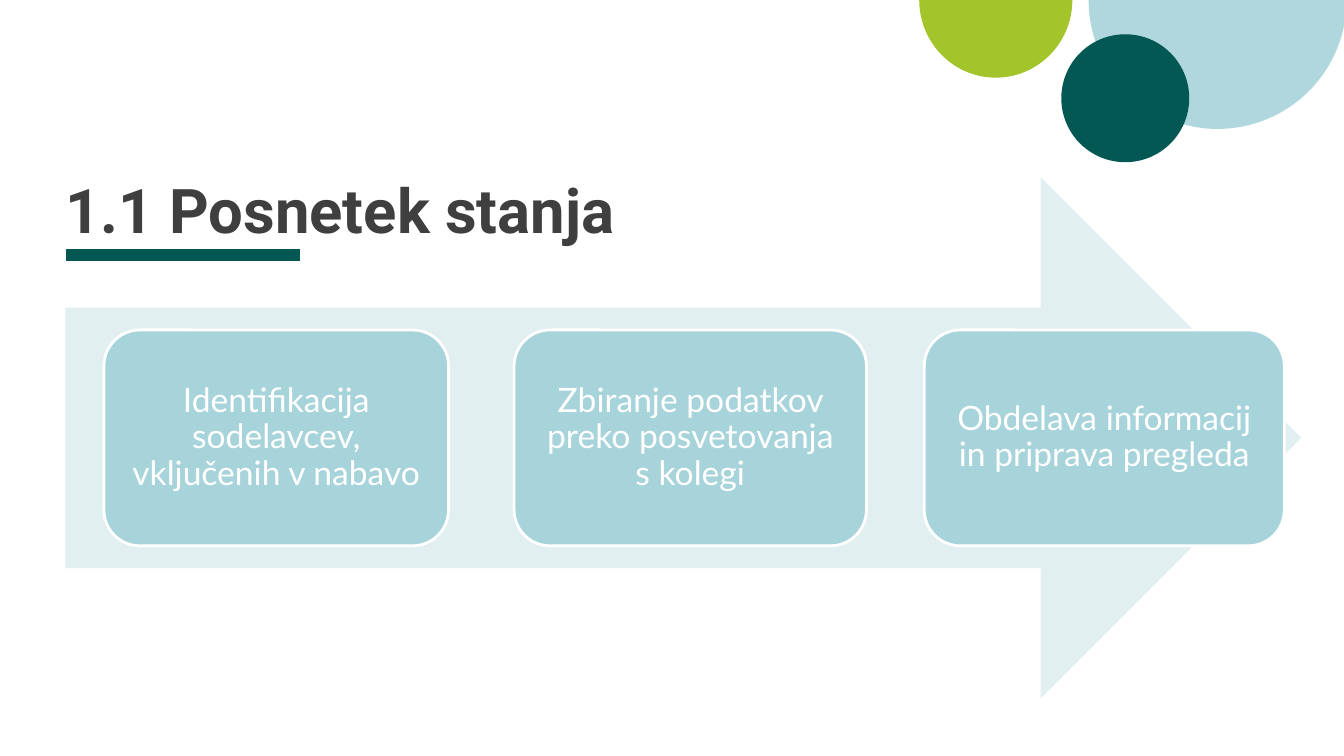
from dataclasses import dataclass

import lxml.etree
import pptx
import pptx.dml.color
import pptx.enum.shapes
import pptx.enum.text
import pptx.oxml.ns
import pptx.util

Pt = pptx.util.Pt
Shape = pptx.enum.shapes.MSO_SHAPE
Align = pptx.enum.text.PP_ALIGN
Anchor = pptx.enum.text.MSO_ANCHOR


@dataclass(frozen=True)
class Theme:
    dark: str = "035854"
    lime: str = "A3C42A"
    sky: str = "AFD7DD"
    pale: str = "E1EFF1"
    card: str = "A7D3DA"
    white: str = "FFFFFF"
    ink: str = "3F3F3F"
    head: str = "Roboto"
    body: str = "Lato"
    big: int = 44
    text: int = 24


THEME = Theme()
STEPS = [
    "Identifikacija sodelavcev, vključenih v nabavo",
    "Zbiranje podatkov preko posvetovanja s kolegi",
    "Obdelava informacij in priprava pregleda",
]


def color(code):
    return pptx.dml.color.RGBColor.from_string(code)


def add_form(slide, kind, box, fill):
    """Add a flat preset shape without outline or shadow."""
    form = slide.shapes.add_shape(kind, *map(Pt, box))
    form.shadow.inherit = False
    form.fill.solid()
    form.fill.fore_color.rgb = color(fill)
    form.line.fill.background()
    return form


def set_text(frame, text, face, size, tint, inset, space):
    frame.text = text
    frame.word_wrap = True
    frame.auto_size = pptx.enum.text.MSO_AUTO_SIZE.NONE
    frame.margin_left = frame.margin_right = Pt(inset)
    frame.margin_top = frame.margin_bottom = Pt(inset)
    para = frame.paragraphs[0]
    para.line_spacing = space
    para.space_before = Pt(0)
    font = para.runs[0].font
    font.name, font.size = face, Pt(size)
    font.color.rgb = color(tint)
    return para


def add_dots(slide, box):
    """Place two half discs and a full disc in the top right corner."""
    left, top, width, height = box
    discs = [
        (Shape.PIE, 121, -92.2, 184.3, 184.3, THEME.sky),
        (Shape.PIE, 0, -55.4, 109.4, 110.9, THEME.lime),
        (Shape.OVAL, 101.5, 24.5, 91.4, 91.4, THEME.dark),
    ]
    for kind, x, y, w, h, fill in discs:
        disc = add_form(slide, kind, (left + x, top + y, w, h), fill)
        if kind == Shape.PIE:
            disc.adjustments[0] = 0
            disc.adjustments[1] = 108


def add_title(slide, box, text):
    left, top, width, height = box
    title = slide.shapes.title
    title.left, title.top, title.width, title.height = map(Pt, box)
    frame = title.text_frame
    para = set_text(frame, text, THEME.head, THEME.big, THEME.ink, 0, 0.8)
    para.alignment = Align.LEFT
    para.runs[0].font.bold = True
    frame.vertical_anchor = Anchor.BOTTOM

    base = Pt(top + height + 7.2)
    rule = slide.shapes.add_connector(
        pptx.enum.shapes.MSO_CONNECTOR.STRAIGHT,
        Pt(left), base, Pt(left + 167.5), base)
    rule.line.color.rgb = color(THEME.dark)
    rule.line.width = Pt(8)
    props = rule._element.spPr
    lxml.etree.SubElement(props, pptx.oxml.ns.qn("a:effectLst"))


def add_flow(slide, box, steps):
    """Draw the wide arrow with evenly pitched, slowly widening cards."""
    left, top, width, height = box
    add_form(slide, Shape.RIGHT_ARROW, box, THEME.pale)
    tall = 154.2
    for i, step in enumerate(steps):
        spot = (left + 27.4 + 293 * i, top + (height - tall) / 2,
                246.2 + 5.5 * i, tall)
        card = add_form(slide, Shape.ROUNDED_RECTANGLE, spot, THEME.card)
        card.line.color.rgb = color(THEME.white)
        card.line.width = Pt(2)
        frame = card.text_frame
        para = set_text(frame, step, THEME.body, THEME.text, THEME.white, 9, 0.9)
        para.alignment = Align.CENTER
        frame.vertical_anchor = Anchor.MIDDLE


def main():
    deck = pptx.Presentation()
    deck.slide_width, deck.slide_height = Pt(960), Pt(540)
    slide = deck.slides.add_slide(deck.slide_layouts[5])
    add_dots(slide, (656.6, 0, 303.4, 116))
    add_title(slide, (46.8, 132.5, 870.5, 42.5), "1.1 Posnetek stanja")
    add_flow(slide, (46.8, 126.7, 882.7, 372.2), STEPS)
    deck.save("out.pptx")


if __name__ == "__main__":
    main()
